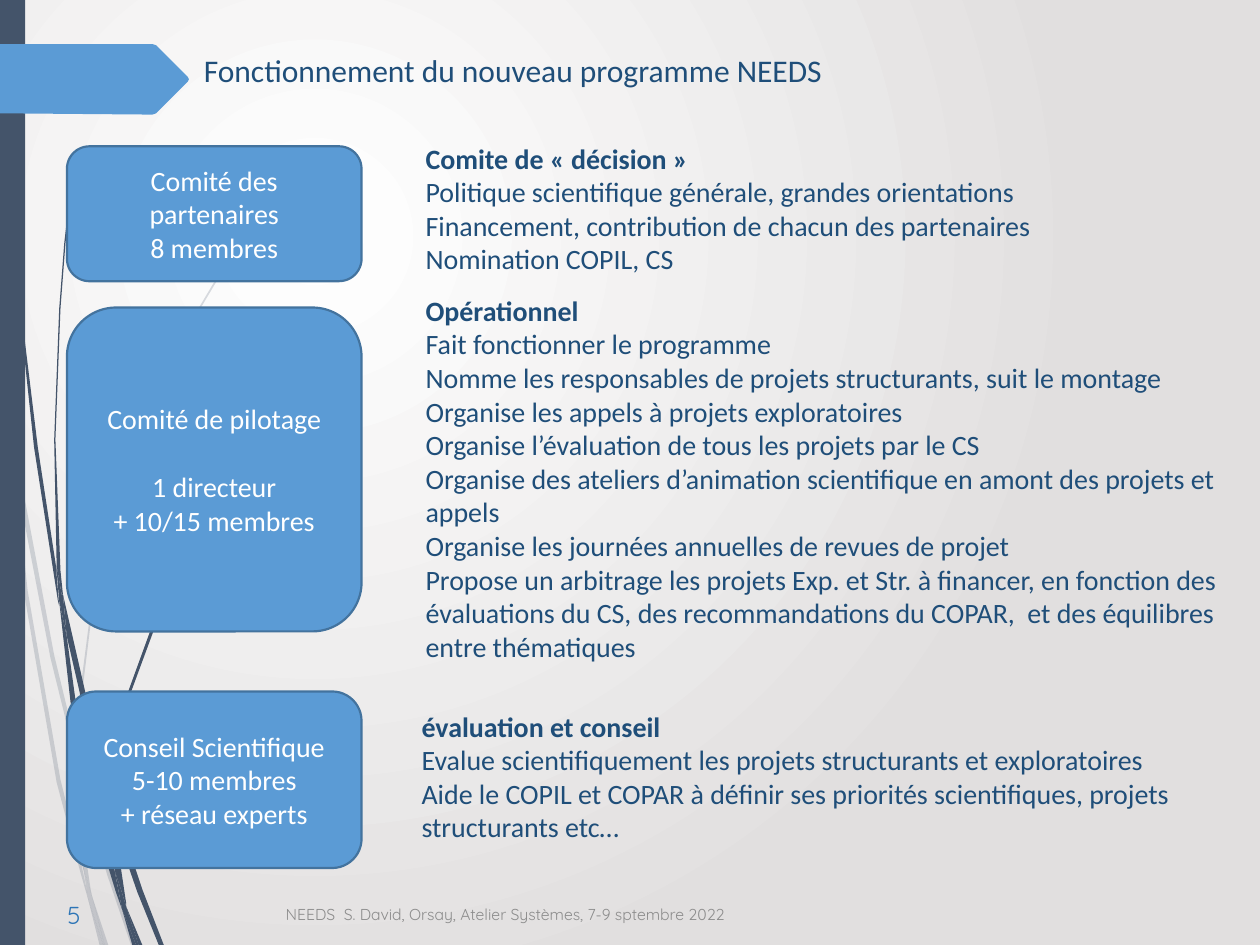
from lxml.etree import SubElement
from pptx import Presentation
from pptx.dml.color import RGBColor
from pptx.enum.shapes import MSO_SHAPE
from pptx.enum.text import MSO_ANCHOR, PP_ALIGN
from pptx.oxml.ns import qn
from pptx.util import Cm, Pt

NAVY, BLUE, EDGE, INK = "44546A", "5B9BD5", "43739E", "1F4E79"
UNIT = Cm(0.0254)

PALE_STRANDS = [
    [(8, 350), (6, 322), (0, 282), (0, 299), (7, 344)],
    [(40, 522), (59, 599), (59, 586), (43, 520), (10, 345), (12, 376)],
    [(64, 607), (61, 596), (61, 610), (85, 694), (104, 750), (108, 750), (88, 692)],
    [(83, 750), (86, 750), (73, 711)],
    [(64, 683), (48, 619), (22, 469), (12, 376), (8, 350), (19, 470), (45, 621),
     (64, 693), (70, 714), (69, 707)],
    [(58, 599), (60, 646), (64, 683), (67, 692), (73, 711), (72, 706), (63, 646),
     (61, 610), (61, 608)],
    [(61, 584), (76, 462), (111, 349), (159, 245), (187, 198), (201, 175), (217, 154),
     (217, 153), (201, 175), (186, 197), (158, 244), (110, 348), (75, 461), (59, 584),
     (59, 586), (61, 596)],
    [(70, 714), (79, 750), (82, 750)],
    [(67, 692), (65, 683), (69, 707), (70, 714), (82, 750), (83, 750), (73, 711)],
]
DARK_STRANDS = [
    [(5, 110), (14, 233), (27, 355), (46, 477), (47, 481), (45, 457), (45, 453),
     (30, 355), (15, 232), (6, 109), (4, 48), (3, 0), (2, 0), (3, 48)],
    [(73, 592), (88, 645), (88, 633), (88, 631), (77, 590), (50, 472), (53, 505)],
    [(94, 649), (91, 641), (91, 656), (109, 708), (126, 750), (130, 750), (113, 706)],
    [(91, 691), (81, 657), (60, 556), (53, 505), (47, 477), (56, 557), (77, 659),
     (92, 708), (97, 722), (96, 717)],
    [(50, 472), (48, 453), (44, 349), (48, 245), (52, 193), (58, 141), (57, 141),
     (51, 193), (47, 245), (43, 349), (45, 449), (49, 472)],
    [(110, 750), (113, 750), (100, 719)],
    [(47, 477), (53, 505), (50, 472), (49, 472), (45, 449), (45, 453)],
    [(91, 633), (103, 552), (131, 476), (169, 406), (191, 374), (203, 359), (216, 344),
     (215, 344), (203, 358), (191, 373), (168, 405), (129, 474), (101, 551), (88, 631),
     (91, 641)],
    [(97, 722), (105, 750), (108, 750)],
    [(88, 645), (91, 691), (96, 706), (100, 719), (100, 716), (91, 656), (90, 651)],
    [(96, 706), (91, 691), (96, 717), (97, 722), (108, 750), (110, 750), (100, 719)],
]
TITLE_ARROW = [(149, 65), (124, 90), (121, 91), (0, 90), (0, 35), (121, 35), (124, 36),
               (149, 61), (150, 63)]


def rgb(value):
    return RGBColor.from_string(value)


def paint(sp, fill, line=None):
    sp.shadow.inherit = False
    sp.fill.solid()
    sp.fill.fore_color.rgb = rgb(fill)
    if line:
        sp.line.color.rgb = rgb(line)
        sp.line.width = Pt(1.25)
    else:
        sp.line.fill.background()


def set_background(slide):
    fill = slide.background.fill
    fill.gradient()
    for stop, color in zip(fill.gradient_stops, ("FFFFFF", "E1DFDF")):
        stop.color.rgb = rgb(color)
    grad = slide.element.find(".//" + qn("a:gradFill"))
    grad.remove(grad.find(qn("a:lin")))
    circle = SubElement(grad, qn("a:path"), path="circle")
    SubElement(circle, qn("a:fillToRect"), l="50000", t="50000", r="100000", b="100000")


def add_outline(slide, points, fill, alpha=None):
    builder = slide.shapes.build_freeform(*points[0], scale=UNIT)
    builder.add_line_segments(points[1:], close=True)
    sp = builder.convert_to_shape()
    paint(sp, fill)
    if alpha:
        color = sp.element.spPr.find(".//" + qn("a:srgbClr"))
        SubElement(color, qn("a:alpha"), val=str(alpha * 1000))


def write(tf, lines, size, color, font="Calibri", align=PP_ALIGN.LEFT, heading=False):
    for i, line in enumerate(lines):
        p = tf.add_paragraph() if i else tf.paragraphs[0]
        p.text = line
        p.alignment = align
        p.font.name = font
        p.font.size = Pt(size)
        p.font.bold = heading and i == 0
        p.font.color.rgb = rgb(color)


def add_text(slide, x, y, w, h, lines, size=16, color=INK, wrap=True,
             anchor=MSO_ANCHOR.TOP, **style):
    tf = slide.shapes.add_textbox(Cm(x), Cm(y), Cm(w), Cm(h)).text_frame
    tf.word_wrap = wrap
    tf.vertical_anchor = anchor
    write(tf, lines, size, color, **style)


def add_committee(slide, y, h, lines):
    sp = slide.shapes.add_shape(MSO_SHAPE.ROUNDED_RECTANGLE, Cm(1.35), Cm(y), Cm(5.94), Cm(h))
    paint(sp, BLUE, EDGE)
    tf = sp.text_frame
    tf.word_wrap = True
    tf.vertical_anchor = MSO_ANCHOR.MIDDLE
    write(tf, lines, 16, "FFFFFF", align=PP_ALIGN.CENTER)
    return tf


def add_decor(slide):
    for points in PALE_STRANDS:
        add_outline(slide, points, NAVY, alpha=20)
    for points in DARK_STRANDS:
        add_outline(slide, points, NAVY)
    bar = slide.shapes.add_shape(MSO_SHAPE.RECTANGLE, 0, 0, Cm(0.51), Cm(19.05))
    paint(bar, NAVY)
    add_outline(slide, TITLE_ARROW, BLUE)


def main():
    prs = Presentation()
    prs.slide_width, prs.slide_height = Cm(25.4), Cm(19.05)
    slide = prs.slides.add_slide(prs.slide_layouts[6])
    set_background(slide)
    add_decor(slide)
    add_text(slide, 3.86, 0.91, 13.13, 1.02, ["Fonctionnement du nouveau programme NEEDS"],
             size=18, wrap=False)

    add_committee(slide, 2.95, 2.72, ["Comité des partenaires", "8 membres"])
    add_text(slide, 8.33, 2.72, 12.85, 3.07, [
        "Comite de « décision »",
        "Politique scientifique générale, grandes orientations",
        "Financement, contribution de chacun des partenaires",
        "Nomination COPIL, CS",
    ], wrap=False, heading=True)

    steering = add_committee(slide, 6.2, 6.53,
                             ["Comité de pilotage", "1 directeur", "+ 10/15 membres"])
    steering.paragraphs[1].space_before = Pt(19.5)
    add_text(slide, 8.33, 5.79, 17.32, 7.77, [
        "Opérationnel",
        "Fait fonctionner le programme",
        "Nomme les responsables de projets structurants, suit le montage",
        "Organise les appels à projets exploratoires",
        "Organise l’évaluation de tous les projets par le CS",
        "Organise des ateliers d’animation scientifique en amont des projets et appels",
        "Organise les journées annuelles de revues de projet",
        "Propose un arbitrage les projets Exp. et Str. à financer, en fonction des évaluations "
        "du CS, des recommandations du COPAR,  et des équilibres entre thématiques",
    ], heading=True)

    add_committee(slide, 13.94, 3.56,
                  ["Conseil Scientifique", "5-10 membres", "+ réseau experts"])
    add_text(slide, 8.25, 14.17, 15.67, 3.76, [
        "évaluation et conseil",
        "Evalue scientifiquement les projets structurants et exploratoires",
        "Aide le COPIL et COPAR à définir ses priorités scientifiques, projets structurants etc…",
    ], heading=True)

    add_text(slide, 5.51, 17.93, 15.88, 1.02,
             ["NEEDS  S. David, Orsay, Atelier Systèmes, 7-9 sptembre 2022"],
             size=9, color="8C8C8C", font="Quicksand", anchor=MSO_ANCHOR.MIDDLE)
    add_text(slide, 0.25, 17.93, 1.63, 1.02, ["5"], size=14, color="2E75B6",
             font="Quicksand", anchor=MSO_ANCHOR.MIDDLE, align=PP_ALIGN.RIGHT)
    prs.save("out.pptx")


if __name__ == "__main__":
    main()
